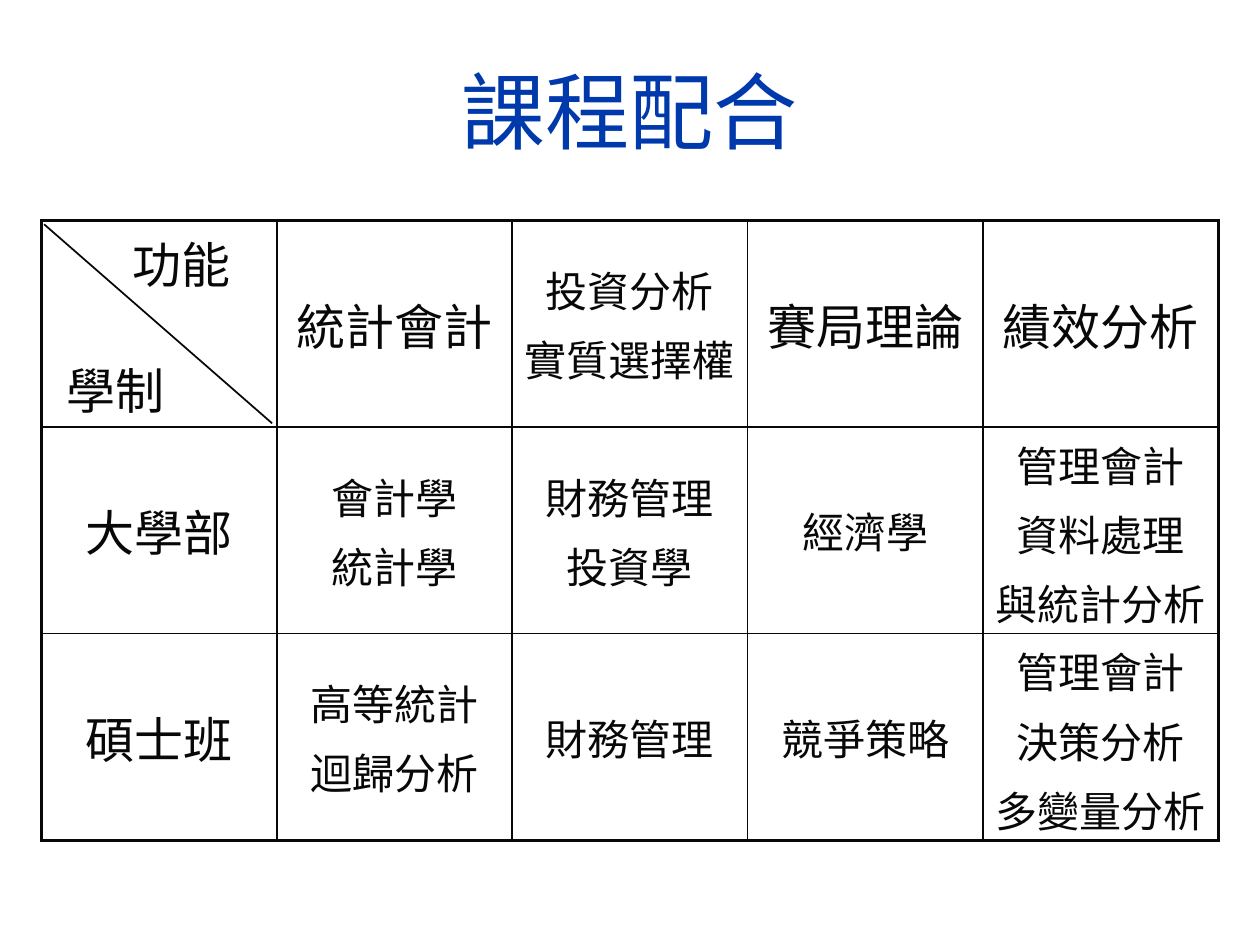
"""Build the course matching slide: a title and a table of courses."""
from lxml import etree
from pptx import Presentation
from pptx import util as u
from pptx.dml.color import RGBColor
from pptx.enum import shapes, text
from pptx.oxml.ns import qn

INK, BLUE = "080808", "0039AC"
SANS, CJK = "Arial", "Noto Sans CJK SC"
MID = text.PP_ALIGN.CENTER


def color(code):
    return RGBColor.from_string(code)


def write(frame, lines, size, ink=INK, align=MID, face=CJK, latin=()):
    frame.word_wrap = True
    for i, line in enumerate(lines):
        para = frame.add_paragraph() if i else frame.paragraphs[0]
        para.text = line
        para.alignment = align
        if i:
            para.space_before = u.Pt(size * 0.2)
        para.font.size = u.Pt(size)
        para.font.color.rgb = color(ink)
        para.font.name = SANS if line in latin else face
        props = para._p.get_or_add_pPr().get_or_add_defRPr()
        etree.SubElement(props, qn("a:ea")).set("typeface", CJK)


deck = Presentation()
deck.slide_width, deck.slide_height = u.Inches(10), u.Inches(7.5)
slide = deck.slides.add_slide(deck.slide_layouts[6])

title = slide.shapes.add_textbox(u.Inches(0.33), u.Inches(0.25), u.Inches(9.34), u.Inches(1.25))
title.text_frame.vertical_anchor = text.MSO_ANCHOR.MIDDLE
write(title.text_frame, ["課程配合"], 48, BLUE, face=SANS)

rows = [
    ["功能", "統計會計", "投資分析\n實質選擇權", "賽局理論", "績效分析"],
    ["大學部", "會計學\n統計學", "財務管理\n投資學", "經濟學", "管理會計\n資料處理\n與統計分析"],
    ["碩士班", "高等統計\n迴歸分析", "財務管理", "競爭策略", "管理會計\n決策分析\n多變量分析"],
]
latin = {"高等統計", "迴歸分析", "決策分析", "多變量分析"}
high, wide = len(rows), len(rows[0])
grid = slide.shapes.add_table(
    high, wide, u.Inches(0.33), u.Inches(1.75), u.Inches(9.34), u.Inches(4.92)
).table
grid.first_row = grid.horz_banding = False

for r, row in enumerate(rows):
    for c, words in enumerate(row):
        cell = grid.cell(r, c)
        lines = words.split("\n")
        head = c == 0 or (r == 0 and len(lines) == 1)
        write(cell.text_frame, lines, 28 if head else 24, latin=latin)
        cell.vertical_anchor = text.MSO_ANCHOR.MIDDLE
        edges = {"L": c == 0, "R": c == wide - 1, "T": r == 0, "B": r == high - 1}
        for side, outer in edges.items():
            line = etree.SubElement(cell._tc.get_or_add_tcPr(), qn("a:ln" + side))
            line.set("w", str(u.Pt(2.25 if outer else 1)))
            fill = etree.SubElement(line, qn("a:solidFill"))
            etree.SubElement(fill, qn("a:srgbClr")).set("val", INK)
        cell.fill.background()

corner = grid.cell(0, 0)
corner.vertical_anchor = text.MSO_ANCHOR.TOP
corner.margin_left = u.Inches(0.45)

slash = slide.shapes.add_connector(
    shapes.MSO_CONNECTOR.STRAIGHT, u.Inches(0.35), u.Inches(1.78), u.Inches(2.16), u.Inches(3.36)
)
slash.line.color.rgb = color(INK)
slash.line.width = u.Pt(1)
etree.SubElement(slash._element.spPr, qn("a:effectLst"))

label = slide.shapes.add_textbox(u.Inches(0.43), u.Inches(2.81), u.Inches(1.18), u.Inches(0.57))
write(label.text_frame, ["學制"], 28, align=text.PP_ALIGN.LEFT, face=SANS)

deck.save("out.pptx")
